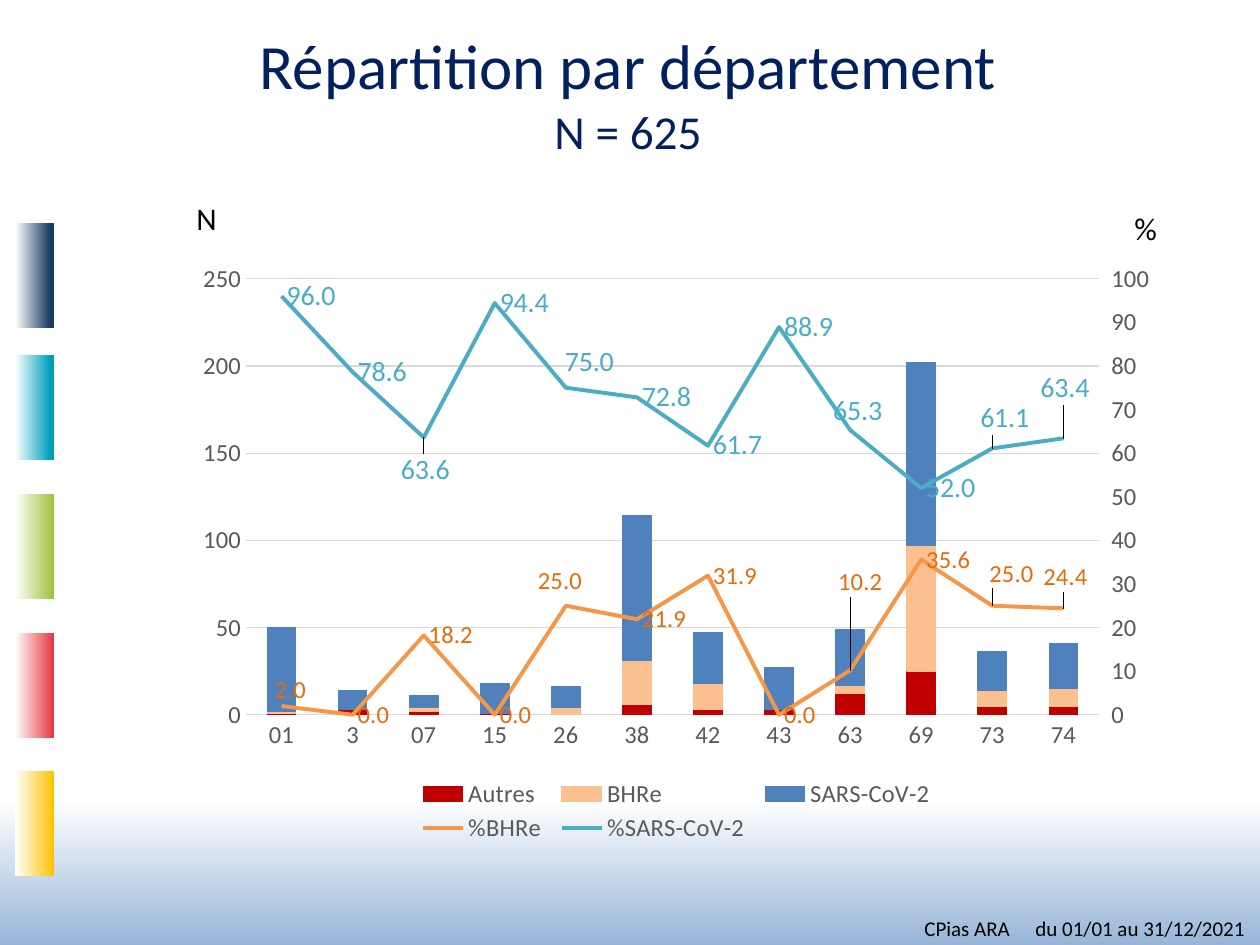
from pptx import Presentation, oxml
from pptx import util as u
from pptx.chart import axis, data
from pptx.dml import color
from pptx.enum import chart as ch, shapes, text
from pptx.oxml import ns

DEPARTMENTS = ["01", "3", "07", "15", "26", "38", "42", "43", "63", "69", "73", "74"]
COUNTS = {
    "Autres": ("C00000", [1, 3, 2, 1, None, 6, 3, 3, 12, 25, 5, 5]),
    "BHRe": ("FAC090", [1, None, 2, None, 4, 25, 15, None, 5, 72, 9, 10]),
    "SARS-CoV-2": ("4F81BD", [48, 11, 7, 17, 12, 83, 29, 24, 32, 105, 22, 26]),
}
RATES = {
    "%BHRe": ("F79646", [2, 0, 18.2, 0, 25, 21.9, 31.9, 0, 10.2, 35.6, 25, 24.4]),
    "%SARS-CoV-2": ("4BACC6", [96, 78.6, 63.6, 94.4, 75, 72.8, 61.7, 88.9, 65.3, 52, 61.1, 63.4]),
}
RATE_LABELS = {
    "%BHRe": ("E46C0A", 14, {0: (-12, -16), 4: (-33, -25), 8: (-17, -88), 10: (-8, -32), 11: (-25, -31)}),
    "%SARS-CoV-2": ("4BACC6", 16, {2: (-28, 33), 4: (-6, -25), 8: (-22, -19), 10: (-17, -30), 11: (-28, -50)}),
}
BARS = {256: (10, "193C64"), 388: (10, "009FBB"), 527: (0, "9CC239"), 666: (0, "E53540"), 804: (0, "FDC300")}
NO_LEADERS = (
    '<c:ext uri="{CE6537A1-D6FC-4f65-9D91-7224C49458BB}" '
    'xmlns:c15="http://schemas.microsoft.com/office/drawing/2012/chart"><c15:showLeaderLines val="0"/></c:ext>'
)


def px(length):
    return u.Emu(round(length * 914400 / 126))


def rgb(value):
    return color.RGBColor.from_string(value)


def assign(target, values):
    for name, value in values.items():
        setattr(target, name, value)


def chart_xml(tag, body):
    return oxml.parse_xml(f"<c:{tag} {ns.nsdecls('c')}>{body}</c:{tag}>")


def layout_xml(target="", **parts):
    modes = "".join(f'<c:{key}Mode val="edge"/>' for key in "xy" if "w" in parts)
    values = "".join(f'<c:{key} val="{value:.4f}"/>' for key, value in parts.items())
    return chart_xml("layout", f"<c:manualLayout>{target}{modes}{values}</c:manualLayout>")


class Board:
    font = "Calibri"
    grey = "595959"
    rule = "D9D9D9"

    def __init__(self, deck):
        self.slide = deck.slides.add_slide(deck.slide_layouts[5])

    def style(self, font, size, hue):
        assign(font, {"name": self.font, "size": u.Pt(size)})
        font.color.rgb = rgb(hue)

    def stroke(self, line, hue, width):
        line.color.rgb = rgb(hue)
        line.width = u.Pt(width)

    def title(self, box, lines):
        heading = self.slide.shapes.title
        assign(heading, dict(zip(("left", "top", "width", "height"), map(px, box))))
        frame = heading.text_frame
        assign(frame, {"vertical_anchor": text.MSO_ANCHOR.MIDDLE, "word_wrap": True,
                       "auto_size": text.MSO_AUTO_SIZE.NONE})
        paragraph = frame.paragraphs[0]
        paragraph.alignment = text.PP_ALIGN.CENTER
        for index, (words, size) in enumerate(lines):
            if index:
                paragraph.add_line_break()
            run = paragraph.add_run()
            run.text = words
            self.style(run.font, size, "002060")

    def gradient(self, box, turn, start, hue):
        band = self.slide.shapes.add_shape(shapes.MSO_SHAPE.RECTANGLE, *map(px, box))
        band.rotation = turn
        band.shadow.inherit = False
        band.line.fill.background()
        band.fill.gradient()
        band.fill.gradient_angle = 270
        for stop, place, tint in zip(band.fill.gradient_stops, (start / 100, 1), (hue, "FFFFFF")):
            stop.position = place
            stop.color.rgb = rgb(tint)

    def label(self, box, words, size, tab=None):
        frame = self.slide.shapes.add_textbox(*map(px, box)).text_frame
        assign(frame, {"word_wrap": tab is not None, "auto_size": text.MSO_AUTO_SIZE.SHAPE_TO_FIT_TEXT})
        paragraph = frame.paragraphs[0]
        if tab:
            paragraph._p.get_or_add_pPr().append(oxml.parse_xml(
                f'<a:tabLst {ns.nsdecls("a")}><a:tab pos="{px(tab)}" algn="l"/></a:tabLst>'))
        run = paragraph.add_run()
        run.text = words
        self.style(run.font, size, "000000")

    def scale(self, value_axis, top, step):
        assign(value_axis, {"minimum_scale": 0, "maximum_scale": top, "major_unit": step})
        self.style(value_axis.tick_labels.font, 14, self.grey)
        value_axis.format.line.fill.background()

    def add_rate_plot(self, chart):
        area = chart._chartSpace.chart.plotArea
        columns = chart.plots[0]._element
        lines = chart_xml("lineChart", '<c:grouping val="standard"/><c:varyColors val="0"/>'
                          '<c:marker val="1"/><c:axId val="5001"/><c:axId val="5002"/>')
        for series in columns.xpath("c:ser")[len(COUNTS):]:
            for flag in series.xpath("c:invertIfNegative"):
                series.remove(flag)
            lines.xpath("c:marker")[0].addprevious(series)
        columns.addnext(lines)
        common = '<c:axId val="{}"/><c:scaling><c:orientation val="minMax"/></c:scaling><c:delete val="{}"/><c:axPos val="{}"/>'
        hidden = chart_xml("catAx", common.format(5001, 1, "b") + '<c:crossAx val="5002"/><c:crosses val="autoZero"/>')
        right = chart_xml("valAx", common.format(5002, 0, "r") + '<c:numFmt formatCode="0" sourceLinked="0"/>'
                          '<c:majorTickMark val="out"/><c:minorTickMark val="none"/><c:tickLblPos val="nextTo"/>'
                          '<c:crossAx val="5001"/><c:crosses val="max"/><c:crossBetween val="between"/>')
        area.xpath("c:valAx")[0].addnext(right)
        right.addnext(hidden)
        self.scale(axis.ValueAxis(right), 100, 10)

    def rate_labels(self, series, width, height):
        hue, size, moves = RATE_LABELS[series.name]
        labels = series.data_labels
        assign(labels, {"show_value": True, "number_format": "0.0", "number_format_is_linked": False,
                        "position": ch.XL_LABEL_POSITION.RIGHT})
        self.style(labels.font, size, hue)
        for index, (right, down) in moves.items():
            moved = series.points[index].data_label
            self.style(moved.font, size, hue)
            moved.position = ch.XL_LABEL_POSITION.RIGHT
            first = moved._get_or_add_dLbl().xpath("c:idx")[0]
            first.addnext(oxml.parse_xml(f'<c:numFmt {ns.nsdecls("c")} formatCode="0.0" sourceLinked="0"/>'))
            first.addnext(layout_xml(x=right / width, y=down / height))
        labels._element.append(chart_xml("extLst", NO_LEADERS))

    def combined_chart(self, box):
        numbers = data.CategoryChartData()
        numbers.categories = DEPARTMENTS
        for name, (_, values) in (COUNTS | RATES).items():
            numbers.add_series(name, values)
        chart = self.slide.shapes.add_chart(ch.XL_CHART_TYPE.COLUMN_STACKED, *map(px, box), numbers).chart
        self.style(chart.font, 10, "000000")
        assign(chart, {"has_title": False, "has_legend": True})
        counts = chart.value_axis
        self.add_rate_plot(chart)

        columns, lines = chart.plots
        assign(columns, {"gap_width": 150, "overlap": 100, "vary_by_categories": False})
        for series in columns.series:
            hue = COUNTS[series.name][0]
            series.format.fill.solid()
            series.format.fill.fore_color.rgb = rgb(hue)
            self.stroke(series.format.line, hue, 0.75)
        for series in lines.series:
            self.stroke(series.format.line, RATES[series.name][0], 2.25)
            series.smooth = False
            series.marker.style = ch.XL_MARKER_STYLE.NONE
            self.rate_labels(series, *box[2:])

        self.scale(counts, 250, 50)
        self.stroke(counts.major_gridlines.format.line, self.rule, 0.75)
        departments = chart.category_axis
        self.style(departments.tick_labels.font, 14, self.grey)
        self.stroke(departments.format.line, self.rule, 0.75)
        for plain in (counts, departments):
            plain.major_tick_mark = ch.XL_TICK_MARK.NONE

        legend = chart.legend
        assign(legend, {"position": ch.XL_LEGEND_POSITION.BOTTOM, "include_in_layout": False})
        self.style(legend.font, 14, self.grey)
        legend._element.xpath("c:legendPos")[0].addnext(layout_xml(x=0.23, y=0.88, w=0.54, h=0.12))
        area = chart._chartSpace.chart.plotArea
        for old in area.xpath("c:layout"):
            area.remove(old)
        area.insert(0, layout_xml('<c:layoutTarget val="inner"/>', x=0.063, y=0.045, w=0.866, h=0.733))


def main():
    deck = Presentation()
    assign(deck, {"slide_width": px(1260), "slide_height": px(945)})
    board = Board(deck)
    board.gradient((0, 800, 1260, 149), 180, 0, "95B3D7")
    for top, (start, hue) in BARS.items():
        board.gradient((-18, top, 105, 39), 90, start, hue)
    board.title((75, 20, 1106, 145), [("Répartition par département", 36), ("N = 625", 27)])
    board.combined_chart((184, 252, 985, 595))
    board.label((184, 193, 45, 50), "N", 18)
    board.label((1122, 203, 48, 50), "%", 18)
    board.label((912, 909, 348, 38), "CPias ARA\tdu 01/01 au 31/12/2021", 12, tab=111)
    deck.save("out.pptx")


if __name__ == "__main__":
    main()
